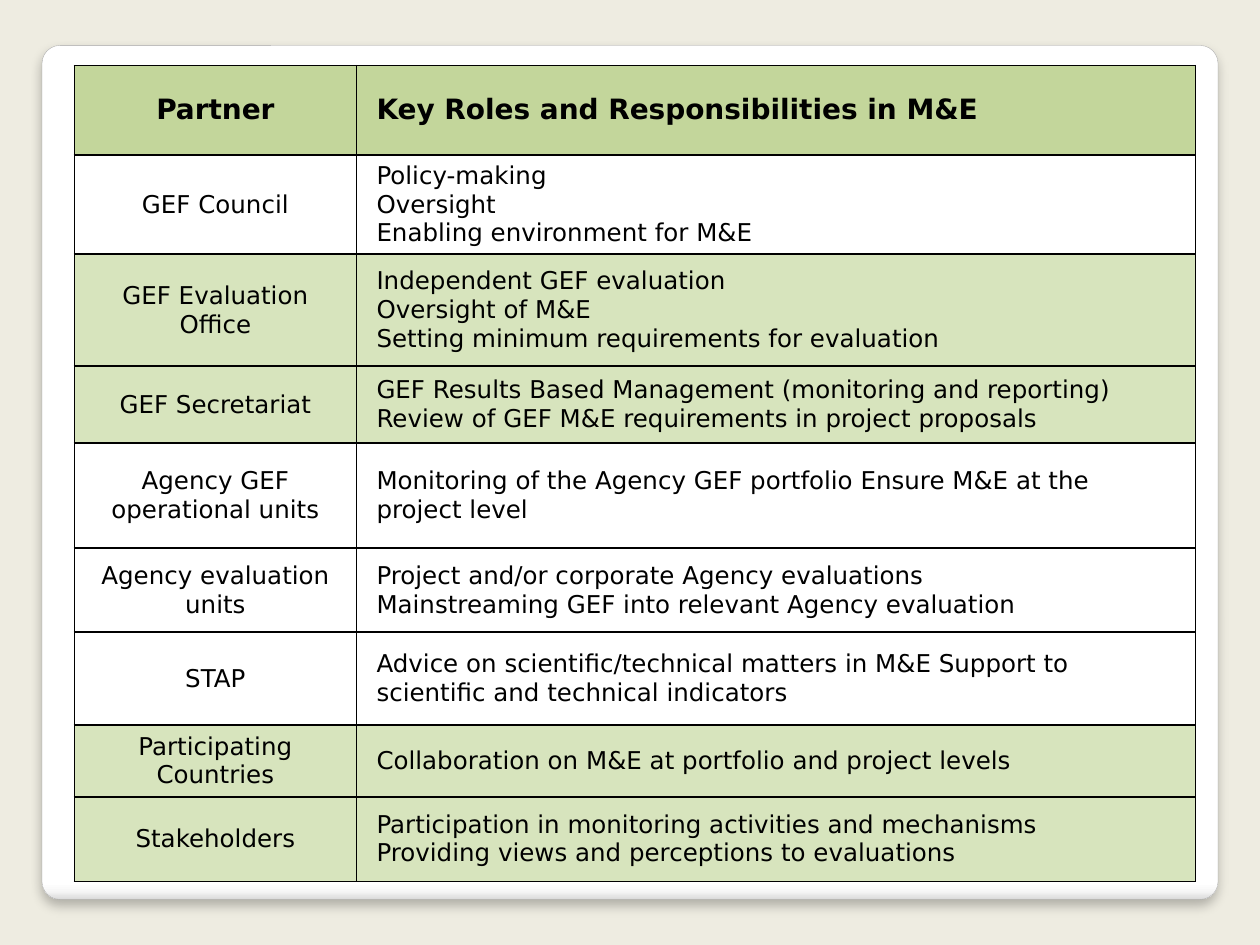
from dataclasses import dataclass

from lxml import etree
from pptx import Presentation
from pptx.dml.color import RGBColor
from pptx.enum.shapes import MSO_SHAPE
from pptx.enum.text import MSO_ANCHOR, PP_ALIGN
from pptx.oxml.ns import qn
from pptx.util import Pt

ROUND_RECT = MSO_SHAPE.ROUNDED_RECTANGLE
MIDDLE = MSO_ANCHOR.MIDDLE
CENTER, LEFT = PP_ALIGN.CENTER, PP_ALIGN.LEFT
BLANK_LAYOUT = 6


@dataclass(frozen=True)
class Theme:
    font: str = "DejaVu Sans"
    head_size: int = 16
    body_size: int = 14
    text: str = "000000"
    background: str = "EEECE1"
    header: str = "C3D69B"
    band: str = "D7E4BD"
    card_line: str = "A4A4A4"
    card_stops: tuple = ((0, "FFFFFF"), (98, "FFFFFF"), (99, "F7F7F7"), (100, "DADADA"))


def add_color(parent, color):
    return etree.SubElement(parent, qn("a:srgbClr"), val=color)


class Deck:
    def __init__(self, prs, theme):
        self.theme = theme
        self.s = prs.slides.add_slide(prs.slide_layouts[BLANK_LAYOUT])
        fill = self.s.background.fill
        fill.solid()
        fill.fore_color.rgb = RGBColor.from_string(theme.background)

    def card(self, x, y, w, h):
        """Rounded panel with a shaded lower edge and a soft shadow."""
        sp = self.s.shapes.add_shape(ROUND_RECT, Pt(x), Pt(y), Pt(w), Pt(h))
        sp.adjustments[0] = 0.021
        sp.line.color.rgb = RGBColor.from_string(self.theme.card_line)
        sp.line.width = Pt(0.16)
        sp.fill.gradient()
        sp.fill.gradient_angle = 270
        stops = sp._element.spPr.find(".//" + qn("a:gsLst"))
        for stop in list(stops):
            stops.remove(stop)
        for pos, color in self.theme.card_stops:
            add_color(etree.SubElement(stops, qn("a:gs"), pos=str(pos * 1000)), color)
        sp.shadow.inherit = False
        effects = sp._element.spPr.find(qn("a:effectLst"))
        shadow = etree.SubElement(effects, qn("a:outerShdw"), blurRad=str(Pt(6)),
                                  dist=str(Pt(4)), dir="5400000", rotWithShape="0")
        etree.SubElement(add_color(shadow, "000000"), qn("a:alpha"), val="25000")

    def table(self, x, y, col_widths, rows):
        """Rows are (height, fill or None, partner, list of roles); the first is the header."""
        frame = self.s.shapes.add_table(len(rows), len(col_widths), Pt(x), Pt(y),
                                        Pt(sum(col_widths)), Pt(sum(r[0] for r in rows)))
        table = frame.table
        table.horz_banding = False
        for column, width in zip(table.columns, col_widths):
            column.width = Pt(width)
        for i, (height, color, partner, roles) in enumerate(rows):
            table.rows[i].height = Pt(height)
            self.cell(table.cell(i, 0), [partner], color, CENTER, i == 0)
            self.cell(table.cell(i, 1), roles, color, LEFT, i == 0)

    def cell(self, cell, lines, color, align, header):
        self.borders(cell)
        if color:
            cell.fill.solid()
            cell.fill.fore_color.rgb = RGBColor.from_string(color)
        else:
            cell.fill.background()
        cell.vertical_anchor = MIDDLE
        cell.margin_left = cell.margin_right = Pt(11.5)
        cell.margin_top = cell.margin_bottom = 0
        tf = cell.text_frame
        tf.text = "\n".join(lines)
        for p in tf.paragraphs:
            p.alignment = align
            for r in p.runs:
                r.font.name = self.theme.font
                r.font.size = Pt(self.theme.head_size if header else self.theme.body_size)
                r.font.bold = header
                r.font.color.rgb = RGBColor.from_string(self.theme.text)

    def borders(self, cell):
        tcPr = cell._tc.get_or_add_tcPr()
        for side in ("a:lnL", "a:lnR", "a:lnT", "a:lnB"):
            ln = etree.SubElement(tcPr, qn(side), w=str(Pt(1)))
            add_color(etree.SubElement(ln, qn("a:solidFill")), self.theme.text)


def main():
    prs = Presentation()
    prs.slide_width, prs.slide_height = Pt(720), Pt(540)
    theme = Theme()
    deck = Deck(prs, theme)

    # Panel behind the table
    deck.card(24, 26, 672, 488)

    # Partners and their roles
    deck.table(42.5, 37.5, [161.2, 479.6], [
        (51, theme.header, "Partner", ["Key Roles and Responsibilities in M&E"]),
        (56.8, None, "GEF Council",
         ["Policy-making", "Oversight", "Enabling environment for M&E"]),
        (64, theme.band, "GEF Evaluation Office",
         ["Independent GEF evaluation", "Oversight of M&E",
          "Setting minimum requirements for evaluation"]),
        (44, theme.band, "GEF Secretariat",
         ["GEF Results Based Management (monitoring and reporting)",
          "Review of GEF M&E requirements in project proposals"]),
        (60, None, "Agency GEF operational units",
         ["Monitoring of the Agency GEF portfolio Ensure M&E at the project level"]),
        (48, None, "Agency evaluation units",
         ["Project and/or corporate Agency evaluations",
          "Mainstreaming GEF into relevant Agency evaluation"]),
        (53.2, None, "STAP",
         ["Advice on scientific/technical matters in M&E Support to "
          "scientific and technical indicators"]),
        (41, theme.band, "Participating Countries",
         ["Collaboration on M&E at portfolio and project levels"]),
        (48.2, theme.band, "Stakeholders",
         ["Participation in monitoring activities and mechanisms",
          "Providing views and perceptions to evaluations"]),
    ])
    prs.save("out.pptx")


if __name__ == "__main__":
    main()
